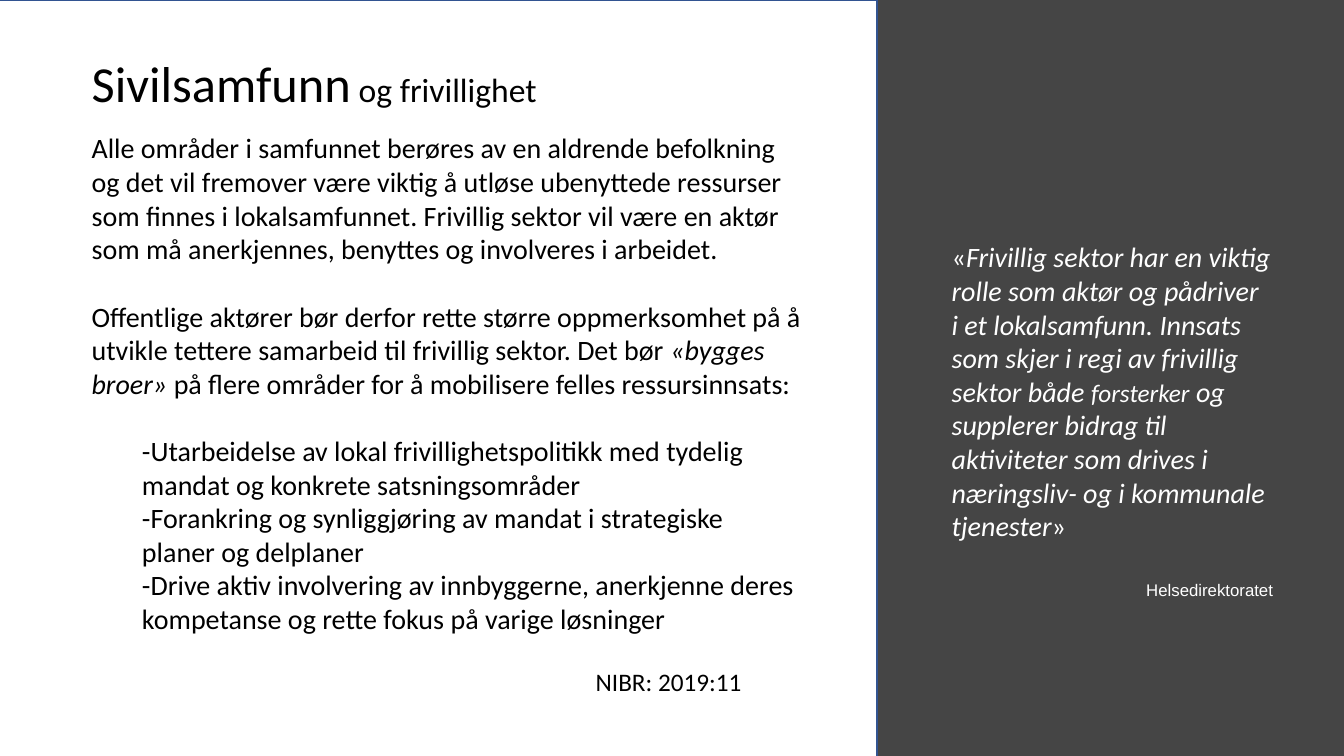
"""Builds the slide on civil society and volunteering."""
from pptx import Presentation
from pptx.dml.color import RGBColor
from pptx.enum.shapes import MSO_SHAPE
from pptx.enum.text import MSO_ANCHOR, MSO_AUTO_SIZE, PP_ALIGN
from pptx.util import Inches, Pt

BLACK, WHITE = "000000", "FFFFFF"


def rgb(hex_code):
    return RGBColor.from_string(hex_code)


def add_runs(p, runs, color, font="Calibri"):
    for text, size, italic in runs:
        for i, line in enumerate(text.split("\n")):
            if i:
                p.add_line_break()
            r = p.add_run()
            r.text = line
            r.font.name, r.font.size, r.font.italic = font, Pt(size), italic
            r.font.color.rgb = rgb(color)


prs = Presentation()
prs.slide_width, prs.slide_height = Inches(13.33), Inches(7.5)
s = prs.slides.add_slide(prs.slide_layouts[5])
s.background.fill.solid()
s.background.fill.fore_color.rgb = rgb("454545")

title = s.shapes.title
title.left, title.top = Inches(0.81), Inches(0.47)
title.width, title.height = Inches(7.43), Inches(0.71)
tf = title.text_frame
tf.auto_size, tf.vertical_anchor = MSO_AUTO_SIZE.NONE, MSO_ANCHOR.TOP
p = tf.paragraphs[0]
p.alignment = PP_ALIGN.LEFT
add_runs(p, [("Sivilsamfunn", 36, False), (" og frivillighet", 24, False)], BLACK)

panel = s.shapes.add_shape(MSO_SHAPE.RECTANGLE, Inches(-0.05), Inches(0),
                           Inches(8.75), Inches(7.59))
panel.shadow.inherit = False
panel.fill.solid()
panel.fill.fore_color.rgb = rgb(WHITE)
panel.line.color.rgb = rgb("325491")
panel.line.width = Pt(1)
title.element.addprevious(panel.element)

quote = s.shapes.add_textbox(Inches(9.34), Inches(2.33), Inches(3.41), Inches(3.2))
tf = quote.text_frame
tf.word_wrap = True
add_runs(tf.paragraphs[0], [
    ("«", 20, False),
    ("Frivillig sektor har en viktig rolle som aktør og pådriver\ni et lokalsamfunn. "
     "Innsats som skjer i regi av frivillig sektor både ", 20, True),
    ("forsterker", 18, True),
    (" og supplerer bidrag til aktiviteter som drives i næringsliv- "
     "og i kommunale tjenester", 20, True),
    ("»", 20, False),
], WHITE)

body = s.shapes.add_textbox(Inches(0.81), Inches(1.25), Inches(7.25), Inches(5.76))
tf = body.text_frame
tf.word_wrap = True
paragraphs = [
    (0, 0, [("Alle områder i samfunnet berøres av en aldrende befolkning og det vil "
             "fremover være viktig å utløse ubenyttede ressurser som finnes i "
             "lokalsamfunnet. Frivillig sektor vil være en aktør som må anerkjennes, "
             "benyttes og involveres i arbeidet.", 20, False)]),
    (0, 24, [("Offentlige aktører bør derfor rette større oppmerksomhet på å utvikle "
              "tettere samarbeid til frivillig sektor. Det bør ", 20, False),
             ("«bygges broer» ", 20, True),
             ("på flere områder for å mobilisere felles ressursinnsats:", 20, False)]),
    (0.5, 24, [("-Utarbeidelse av lokal frivillighetspolitikk med tydelig mandat og "
                "konkrete satsningsområder", 20, False)]),
    (0.5, 0, [("-Forankring og synliggjøring av mandat i strategiske planer og "
               "delplaner", 20, False)]),
    (0.5, 0, [("-Drive aktiv involvering av innbyggerne, anerkjenne deres kompetanse "
               "og rette fokus på varige løsninger", 20, False)]),
    (5, 22, [("NIBR: 2019:11", 18, False)]),
]
for i, (indent, before, runs) in enumerate(paragraphs):
    p = tf.add_paragraph() if i else tf.paragraphs[0]
    if indent:
        pPr = p._p.get_or_add_pPr()
        pPr.set("marL", str(Inches(indent)))
        pPr.set("indent", "0")
    if before:
        p.space_before = Pt(before)
    add_runs(p, runs, BLACK)

credit = s.shapes.add_textbox(Inches(11.27), Inches(5.65), Inches(1.59), Inches(0.4))
tf = credit.text_frame
tf.word_wrap = True
tf.vertical_anchor = MSO_ANCHOR.MIDDLE
tf.paragraphs[0].space_after = Pt(6)
add_runs(tf.paragraphs[0], [("Helsedirektoratet", 12, False)], WHITE, "Arial")

prs.save("out.pptx")
